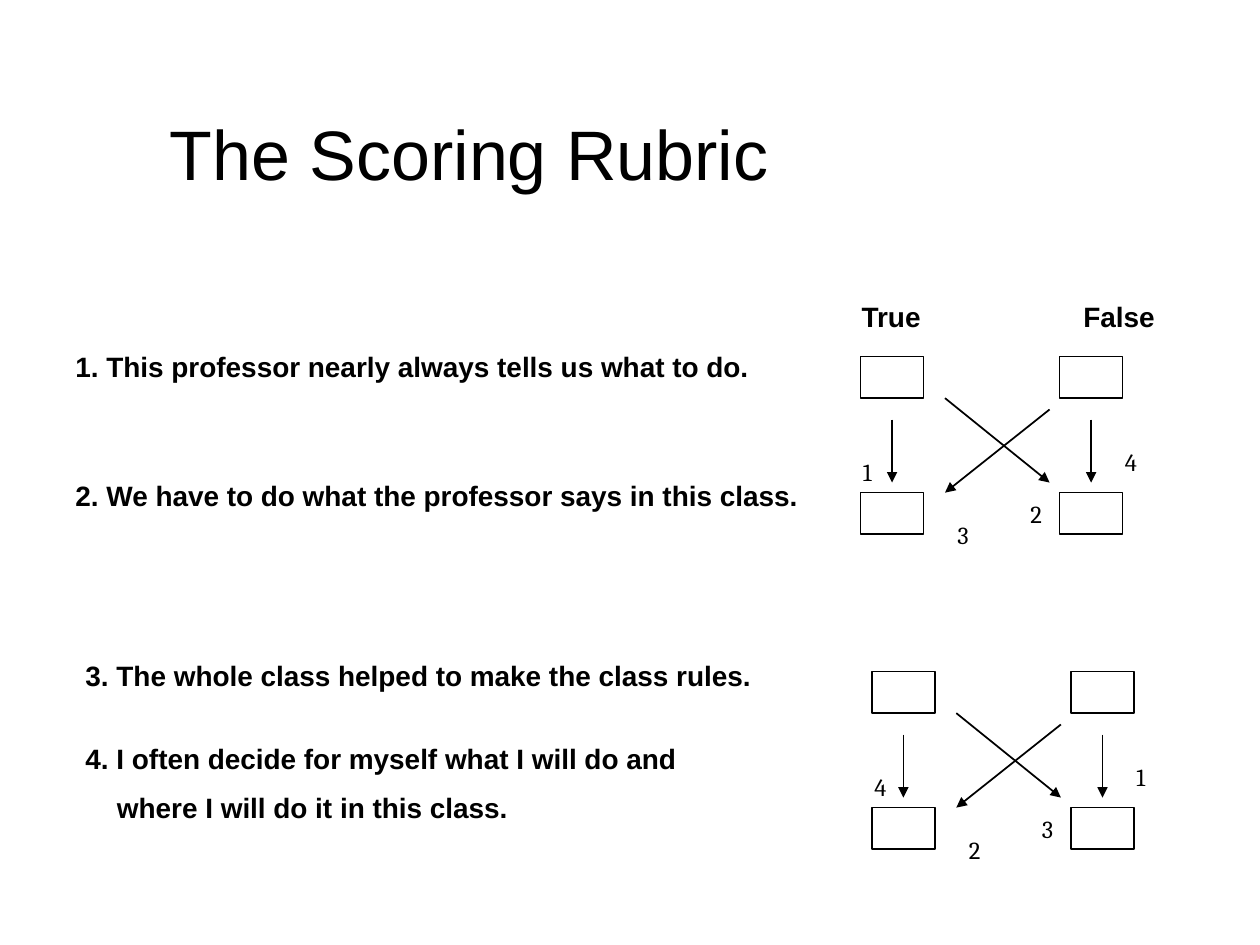
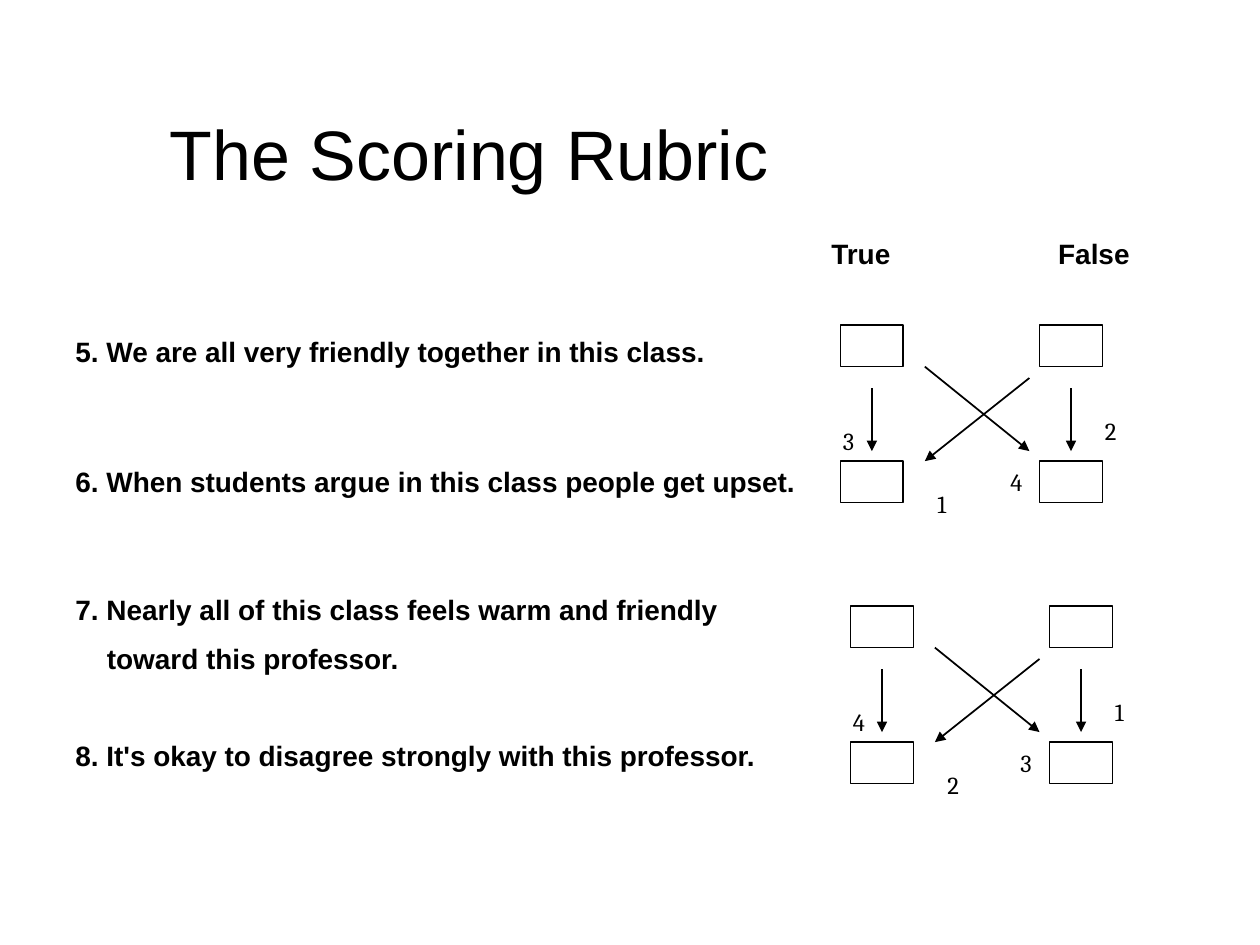
import pptx
import pptx.dml.color
import pptx.enum.shapes
import pptx.enum.text
import pptx.oxml
import pptx.oxml.ns
import pptx.util
from pptx.util import Inches

BLACK = pptx.dml.color.RGBColor(0, 0, 0)
WHITE = pptx.dml.color.RGBColor(255, 255, 255)
HEADING_FONT = "Arial"
SCORE_FONT = "Cambria"

BOX_WIDTH, BOX_HEIGHT = 0.5, 0.33
COLUMN_STEP, ROW_STEP = 1.58, 1.08
ARROWS = [
    ((0.25, 0.5), (0.25, 1)),
    ((1.83, 0.5), (1.83, 1)),
    ((0.67, 0.33), (1.5, 1)),
    ((1.5, 0.42), (0.67, 1.08)),
]
SCORE_PLACES = [(-0.08, 0.75), (0.67, 1.25), (1.25, 1.08), (2, 0.67)]

RUBRICS = [
    {
        "heading_tabs": (6.24, 8),
        "statements": [
            (0.5, 2.33, 2.11, [
                ("\tTrue\tFalse", 0, 0),
                ("1. This professor nearly always tells us what to do.", 9, 0),
                ("2. We have to do what the professor says in this class.", 55, 0),
            ]),
            (0.58, 5.18, 1.48, [
                ("3. The whole class helped to make the class rules.", 0, 0),
                ("4. I often decide for myself what I will do and", 28, 0),
                ("where I will do it in this class.", 9, 0.25),
            ]),
        ],
        "diagrams": [(6.83, 2.83, "1324"), (6.92, 5.33, "4231")],
    },
    {
        "heading_tabs": (6, 7.8),
        "statements": [
            (0.5, 1.83, 2.51, [
                ("\tTrue\tFalse", 0, 0),
                ("5. We are all very friendly together in this class.", 36.5, 0),
                ("6. When students argue in this class people get upset.", 55, 0),
            ]),
            (0.5, 4.65, 1.85, [
                ("7. Nearly all of this class feels warm and friendly", 0, 0),
                ("toward this professor.", 9, 0.25),
                ("8. It's okay to disagree strongly with this professor.", 36, 0),
            ]),
        ],
        "diagrams": [(6.67, 2.58, "3142"), (6.75, 4.81, "4231")],
    },
]


def format_paragraph(paragraph, size, font_name, bold=False):
    for run in paragraph.runs:
        run.font.size = pptx.util.Pt(size)
        run.font.name = font_name
        run.font.bold = bold
        run.font.color.rgb = BLACK


def add_text(shapes, left, top, width, height, text, size, font_name, bold=False):
    shape = shapes.add_textbox(Inches(left), Inches(top), Inches(width), Inches(height))
    text_frame = shape.text_frame
    text_frame.word_wrap = True
    text_frame.text = text
    for paragraph in text_frame.paragraphs:
        format_paragraph(paragraph, size, font_name, bold)
    return text_frame


def set_tabs(paragraph, positions):
    properties = paragraph._p.get_or_add_pPr()
    tab_list = pptx.oxml.parse_xml(f"<a:tabLst {pptx.oxml.ns.nsdecls('a')}/>")
    for position in positions:
        tab = tab_list.makeelement(pptx.oxml.ns.qn("a:tab"), {"pos": str(Inches(position)), "algn": "l"})
        tab_list.append(tab)
    properties.append(tab_list)


def add_statements(slide, left, top, height, lines, heading_tabs):
    text = "\n".join(line for line, _, _ in lines)
    text_frame = add_text(slide.shapes, left, top, 9.08, height, text, 16, HEADING_FONT, True)
    for paragraph, (line, space_before, indent) in zip(text_frame.paragraphs, lines):
        paragraph.space_before = pptx.util.Pt(space_before)
        paragraph._p.get_or_add_pPr().set("marL", str(Inches(indent)))
        if line.startswith("\t"):
            set_tabs(paragraph, heading_tabs)


def add_answer_box(shapes, left, top):
    shape = shapes.add_shape(
        pptx.enum.shapes.MSO_SHAPE.RECTANGLE,
        Inches(left), Inches(top), Inches(BOX_WIDTH), Inches(BOX_HEIGHT),
    )
    shape.shadow.inherit = False
    shape.fill.background()
    shape.line.color.rgb = BLACK
    shape.line.width = pptx.util.Pt(1)


def add_arrow(shapes, start, end):
    connector = shapes.add_connector(
        pptx.enum.shapes.MSO_CONNECTOR.STRAIGHT, *map(Inches, start + end)
    )
    connector.line.color.rgb = BLACK
    connector.line.width = pptx.util.Pt(1)
    line = connector.line._get_or_add_ln()
    line.append(line.makeelement(pptx.oxml.ns.qn("a:tailEnd"), {"type": "triangle"}))
    properties = connector._element.spPr
    properties.append(properties.makeelement(pptx.oxml.ns.qn("a:effectLst"), {}))


def add_scoring_diagram(slide, left, top, scores):
    shapes = slide.shapes.add_group_shape().shapes
    for row in range(2):
        for column in range(2):
            add_answer_box(shapes, left + column * COLUMN_STEP, top + row * ROW_STEP)
    for start, end in ARROWS:
        add_arrow(shapes, (left + start[0], top + start[1]), (left + end[0], top + end[1]))
    for score, (x, y) in zip(scores, SCORE_PLACES):
        add_text(shapes, left + x, top + y, 0.25, 0.33, score, 14, SCORE_FONT)


def add_rubric_slide(presentation, rubric):
    slide = presentation.slides.add_slide(presentation.slide_layouts[6])
    slide.background.fill.solid()
    slide.background.fill.fore_color.rgb = WHITE
    add_text(slide.shapes, 1.25, 0.83, 6.33, 0.77, "The Scoring Rubric", 40, HEADING_FONT)
    for left, top, height, lines in rubric["statements"]:
        add_statements(slide, left, top, height, lines, rubric["heading_tabs"])
    for left, top, scores in rubric["diagrams"]:
        add_scoring_diagram(slide, left, top, scores)


def main():
    presentation = pptx.Presentation()
    presentation.slide_width = Inches(10)
    presentation.slide_height = Inches(7.5)
    for rubric in RUBRICS:
        add_rubric_slide(presentation, rubric)
    presentation.save("out.pptx")


if __name__ == "__main__":
    main()
